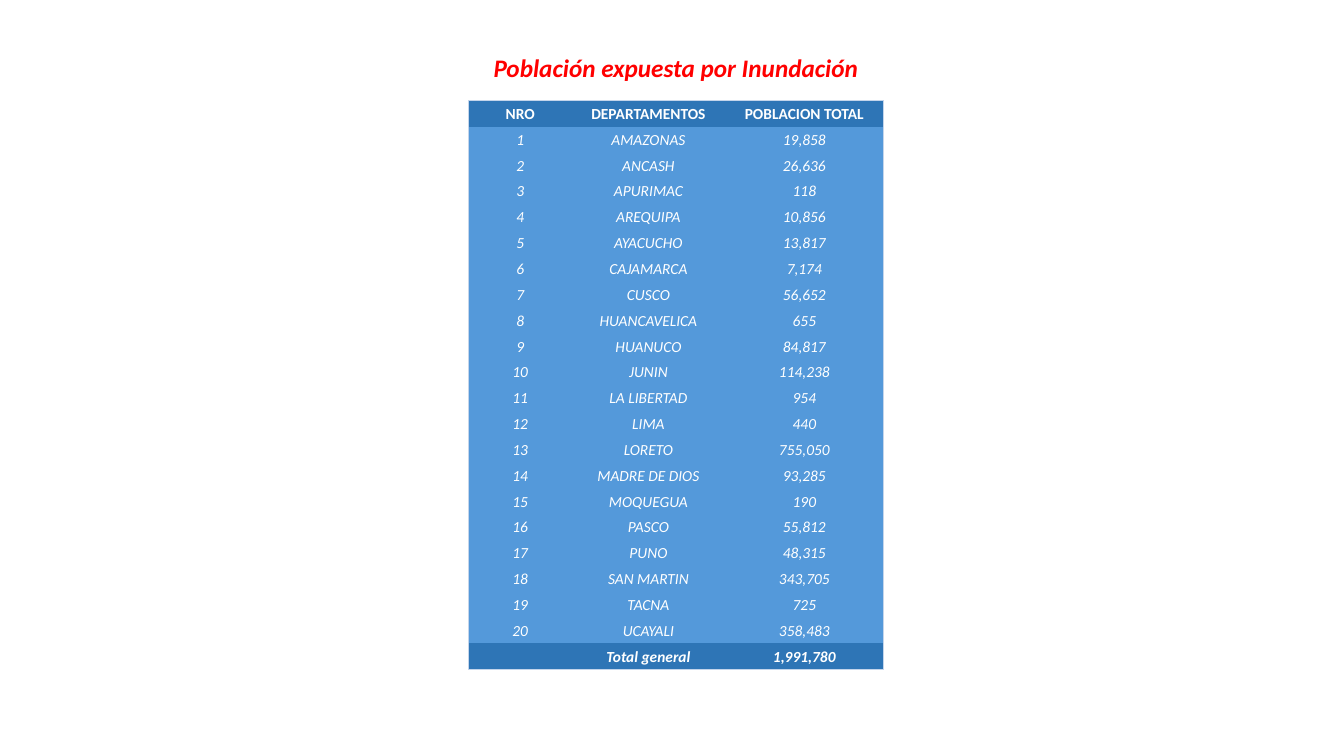
from lxml.etree import SubElement
from pptx import Presentation
from pptx.dml.color import RGBColor
from pptx.enum.text import MSO_ANCHOR, MSO_AUTO_SIZE, PP_ALIGN
from pptx.oxml.ns import qn
from pptx.util import Pt

TITLE = "Población expuesta por Inundación"
HEADER = ("NRO", "DEPARTAMENTOS", "POBLACION TOTAL")
POPULATION = {
    "AMAZONAS": 19858, "ANCASH": 26636, "APURIMAC": 118, "AREQUIPA": 10856,
    "AYACUCHO": 13817, "CAJAMARCA": 7174, "CUSCO": 56652, "HUANCAVELICA": 655,
    "HUANUCO": 84817, "JUNIN": 114238, "LA LIBERTAD": 954, "LIMA": 440,
    "LORETO": 755050, "MADRE DE DIOS": 93285, "MOQUEGUA": 190, "PASCO": 55812,
    "PUNO": 48315, "SAN MARTIN": 343705, "TACNA": 725, "UCAYALI": 358483,
}
TOTAL = ("", "Total general", "1,991,780")

FONT = "Calibri"
RED = RGBColor(0xFF, 0x00, 0x00)
WHITE = RGBColor(0xFF, 0xFF, 0xFF)
DARK_BLUE = RGBColor(0x2E, 0x75, 0xB6)
MID_BLUE = RGBColor(0x54, 0x99, 0xDA)
PALE_BLUE = RGBColor(0xC4, 0xD5, 0xEB)

TABLE_LEFT, TABLE_TOP = 334.8, 72
COLUMN_WIDTHS = (73.6, 109.6, 113.2)
ROW_HEIGHT = 18.48


def style_text(para, size, color, bold, italic):
    para.alignment = PP_ALIGN.CENTER
    font = para.font
    font.name, font.size, font.color.rgb = FONT, Pt(size), color
    font.bold, font.italic = bold, italic


def set_borders(cell, outer):
    """Draw a thin line on the outer edges of a cell and none on the others."""
    properties = cell._tc.get_or_add_tcPr()
    for edge in "LRTB":
        line = SubElement(properties, qn(f"a:ln{edge}"), w=str(Pt(0.5)))
        if edge in outer:
            fill = SubElement(line, qn("a:solidFill"))
            SubElement(fill, qn("a:srgbClr"), val=str(PALE_BLUE))
        else:
            SubElement(line, qn("a:noFill"))


def add_title(page):
    box = page.shapes.add_textbox(Pt(344.2), Pt(34), Pt(277.2), Pt(29))
    frame = box.text_frame
    frame.word_wrap = False
    frame.auto_size = MSO_AUTO_SIZE.SHAPE_TO_FIT_TEXT
    frame.text = TITLE
    style_text(frame.paragraphs[0], 18, RED, True, True)


def add_population_table(page):
    body = [(str(number), name, f"{people:,}")
            for number, (name, people) in enumerate(POPULATION.items(), 1)]
    rows = [HEADER, *body, TOTAL]
    last_row, last_column = len(rows) - 1, len(HEADER) - 1

    table = page.shapes.add_table(
        len(rows), len(HEADER), Pt(TABLE_LEFT), Pt(TABLE_TOP),
        Pt(sum(COLUMN_WIDTHS)), Pt(ROW_HEIGHT * len(rows))).table
    table.first_row = table.horz_banding = False
    for column, width in zip(table.columns, COLUMN_WIDTHS):
        column.width = Pt(width)

    for r, texts in enumerate(rows):
        table.rows[r].height = Pt(ROW_HEIGHT)
        accent = r in (0, last_row)
        for c, text in enumerate(texts):
            cell = table.cell(r, c)
            cell.text = text
            cell.vertical_anchor = MSO_ANCHOR.MIDDLE
            cell.margin_left = cell.margin_right = cell.margin_top = Pt(0.7)
            cell.margin_bottom = 0
            style_text(cell.text_frame.paragraphs[0], 11, WHITE, accent, r > 0)
            edges = {"L": c == 0, "R": c == last_column,
                     "T": r == 0, "B": r == last_row}
            set_borders(cell, [edge for edge, outer in edges.items() if outer])
            cell.fill.solid()
            cell.fill.fore_color.rgb = DARK_BLUE if accent else MID_BLUE


def main():
    deck = Presentation()
    deck.slide_width, deck.slide_height = Pt(960), Pt(540)
    page = deck.slides.add_slide(deck.slide_layouts[6])
    add_title(page)
    add_population_table(page)
    deck.save("out.pptx")


if __name__ == "__main__":
    main()
